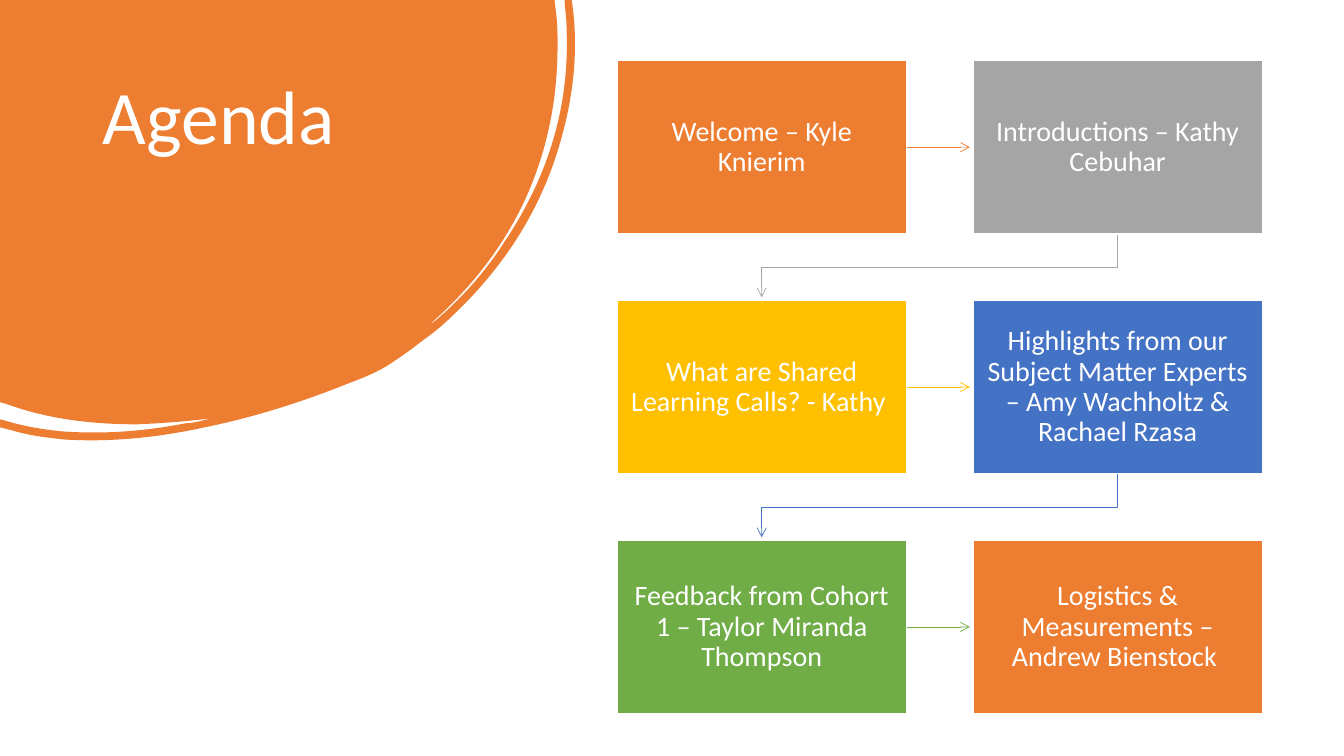
from dataclasses import dataclass

from lxml import etree
from pptx import Presentation
from pptx.dml.color import RGBColor
from pptx.enum.shapes import MSO_CONNECTOR, MSO_SHAPE
from pptx.enum.text import MSO_ANCHOR, PP_ALIGN
from pptx.oxml.ns import qn
from pptx.util import Inches, Pt

RECTANGLE = MSO_SHAPE.RECTANGLE
STRAIGHT = MSO_CONNECTOR.STRAIGHT
TOP, MIDDLE = MSO_ANCHOR.TOP, MSO_ANCHOR.MIDDLE
LEFT, CENTER = PP_ALIGN.LEFT, PP_ALIGN.CENTER


@dataclass(frozen=True)
class Theme:
    font: str = "Calibri"
    title_size: int = 54
    step_size: int = 20
    white: str = "FFFFFF"
    orange: str = "ED7D31"
    gray: str = "A5A5A5"
    gold: str = "FFC000"
    blue: str = "4472C4"
    green: str = "70AD47"


THEME = Theme()
SLIDE_WIDTH, SLIDE_HEIGHT = 13.33, 7.5
TITLE_ONLY = 5
HARD_SPACE = chr(160)

# Grid of agenda steps, in inches
COLUMNS, ROWS = 2, 3
GRID_LEFT, GRID_TOP, GRID_RIGHT, GRID_BOTTOM = 6.12, 0.6, 12.52, 7.08
STEP_WIDTH, STEP_HEIGHT = 2.87, 1.72
COLUMN_GAP = (GRID_RIGHT - GRID_LEFT - COLUMNS * STEP_WIDTH) / (COLUMNS - 1)
ROW_GAP = (GRID_BOTTOM - GRID_TOP - ROWS * STEP_HEIGHT) / (ROWS - 1)
ARROW_CLEARANCE = 0.03
ELBOW_SHARE = 0.5

STEPS = [
    ("Welcome – Kyle Knierim", THEME.orange),
    ("Introductions – Kathy Cebuhar", THEME.gray),
    (f"What are Shared Learning Calls? - Kathy{HARD_SPACE}", THEME.gold),
    (f"Highlights from our Subject Matter Experts – Amy Wachholtz{HARD_SPACE}& Rachael Rzasa",
     THEME.blue),
    ("Feedback from Cohort 1 – Taylor Miranda Thompson", THEME.green),
    (f"Logistics & Measurements – Andrew Bienstock{HARD_SPACE}", THEME.orange),
]

# Blob outline from the top left corner: pairs are lines, sixes are Bézier curves
BLOB = [
    (5.5, 0), (5.52, 0.17),
    (5.53, 0.26, 5.53, 0.36, 5.53, 0.45),
    (5.53, 1.01, 5.42, 1.54, 5.18, 2.04),
    (4.96, 2.49, 4.65, 2.88, 4.27, 3.21),
    (4.29, 3.21, 4.3, 3.19, 4.32, 3.18),
    (4.59, 2.95, 4.82, 2.69, 5.01, 2.39),
    (5.43, 1.76, 5.65, 1.07, 5.62, 0.3),
    (5.62, 0.21, 5.61, 0.12, 5.6, 0.03),
    (5.6, 0), (5.67, 0), (5.68, 0.07),
    (5.74, 0.54, 5.68, 1.02, 5.53, 1.5),
    (5.33, 2.14, 4.97, 2.68, 4.48, 3.14),
    (4.39, 3.23, 4.29, 3.31, 4.19, 3.38),
    (4.09, 3.46, 3.99, 3.53, 3.87, 3.61),
    (3.75, 3.69, 3.6, 3.75, 3.44, 3.81),
    (2.99, 3.99, 2.52, 4.14, 2.03, 4.24),
    (1.57, 4.34, 1.1, 4.39, 0.63, 4.36),
    (0.45, 4.34, 0.28, 4.32, 0.12, 4.27),
    (0, 4.24), (0, 4.16), (0.04, 4.17),
    (0.23, 4.23, 0.42, 4.26, 0.61, 4.28),
    (1.03, 4.31, 1.43, 4.28, 1.84, 4.2),
    (1.89, 4.2, 1.93, 4.19, 1.98, 4.18),
    (2.02, 4.17, 2.06, 4.16, 2.1, 4.15),
    (1.86, 4.18, 1.61, 4.2, 1.36, 4.21),
    (0.92, 4.21, 0.48, 4.16, 0.07, 4.01),
    (0, 3.99),
]


def color(value):
    return RGBColor.from_string(value)


def set_all(target, values):
    for name, value in values.items():
        setattr(target, name, value)


def write_text(shape, text, size, align, frame_format):
    frame = shape.text_frame
    set_all(frame, {"word_wrap": True, **frame_format})
    para = frame.paragraphs[0]
    set_all(para, {"alignment": align, "line_spacing": 0.9})
    span = para.add_run()
    span.text = text
    set_all(span.font, {"name": THEME.font, "size": Pt(size)})
    span.font.color.rgb = color(THEME.white)


def add_outline(page, points, close):
    corners = [(Inches(x), Inches(y)) for x, y in points]
    builder = page.shapes.build_freeform(*corners[0], scale=1.0)
    builder.add_line_segments(corners[1:], close=close)
    shape = builder.convert_to_shape()
    shape.shadow.inherit = False
    return shape


def bend_lines(shape, segments):
    """Turn the lines of an outline at the slide's corner into Bézier curves."""
    lines = list(shape.element.iter(qn("a:lnTo")))
    for line, segment in zip(lines, segments):
        if len(segment) == 6:
            curve = etree.Element(qn("a:cubicBezTo"))
            for x, y in zip(segment[::2], segment[1::2]):
                point = etree.SubElement(curve, qn("a:pt"))
                point.set("x", str(Inches(x)))
                point.set("y", str(Inches(y)))
            line.getparent().replace(line, curve)


def add_blob(page):
    blob = add_outline(page, [(0, 0)] + [part[-2:] for part in BLOB], close=True)
    bend_lines(blob, BLOB)
    blob.fill.solid()
    blob.fill.fore_color.rgb = color(THEME.orange)
    blob.line.fill.background()
    page.shapes.title.element.addprevious(blob.element)


def add_title(page, text):
    title = page.shapes.title
    place = {"left": 0.92, "top": 0.74, "width": 3.52, "height": 2.22}
    set_all(title, {name: Inches(value) for name, value in place.items()})
    write_text(title, text, THEME.title_size, LEFT, {"vertical_anchor": TOP})


def step_corner(index):
    row, column = divmod(index, COLUMNS)
    return (GRID_LEFT + column * (STEP_WIDTH + COLUMN_GAP),
            GRID_TOP + row * (STEP_HEIGHT + ROW_GAP))


def add_step(page, index, text, fill):
    left, top = step_corner(index)
    box = page.shapes.add_shape(RECTANGLE, Inches(left), Inches(top),
                                Inches(STEP_WIDTH), Inches(STEP_HEIGHT))
    box.shadow.inherit = False
    box.fill.solid()
    box.fill.fore_color.rgb = color(fill)
    box.line.color.rgb = color(THEME.white)
    box.line.width = Pt(1)
    write_text(box, text, THEME.step_size, CENTER, {
        "vertical_anchor": MIDDLE,
        "margin_left": Inches(0.14), "margin_right": Inches(0.14),
        "margin_top": Inches(0.15), "margin_bottom": Inches(0.15)})


def style_arrow(arrow, line_color):
    arrow.line.color.rgb = color(line_color)
    arrow.line.width = Pt(0.5)
    line = arrow.element.spPr.find(qn("a:ln"))
    etree.SubElement(line, qn("a:tailEnd")).set("type", "arrow")


def add_straight_arrow(page, index, line_color):
    left, top = step_corner(index)
    start, middle = left + STEP_WIDTH, top + STEP_HEIGHT / 2
    end = start + COLUMN_GAP - ARROW_CLEARANCE
    arrow = page.shapes.add_connector(STRAIGHT, Inches(start), Inches(middle),
                                      Inches(end), Inches(middle))
    style_arrow(arrow, line_color)
    etree.SubElement(arrow.element.spPr, qn("a:effectLst"))


def add_elbow_arrow(page, index, line_color):
    left, top = step_corner(index)
    start_x, end_x = left + STEP_WIDTH / 2, GRID_LEFT + STEP_WIDTH / 2
    start_y = top + STEP_HEIGHT
    bend_y = start_y + ROW_GAP * ELBOW_SHARE
    end_y = start_y + ROW_GAP - ARROW_CLEARANCE
    arrow = add_outline(page, [(start_x, start_y), (start_x, bend_y),
                               (end_x, bend_y), (end_x, end_y)], close=False)
    arrow.fill.background()
    style_arrow(arrow, line_color)


def main():
    deck = Presentation()
    set_all(deck, {"slide_width": Inches(SLIDE_WIDTH), "slide_height": Inches(SLIDE_HEIGHT)})
    page = deck.slides.add_slide(deck.slide_layouts[TITLE_ONLY])

    # Title on its blob
    add_blob(page)
    add_title(page, "Agenda")

    # Agenda steps, each with an arrow to the next
    for index, (text, fill) in enumerate(STEPS):
        if index < len(STEPS) - 1:
            row_ends = index % COLUMNS == COLUMNS - 1
            add_arrow = add_elbow_arrow if row_ends else add_straight_arrow
            add_arrow(page, index, fill)
        add_step(page, index, text, fill)

    deck.save("out.pptx")


if __name__ == "__main__":
    main()
